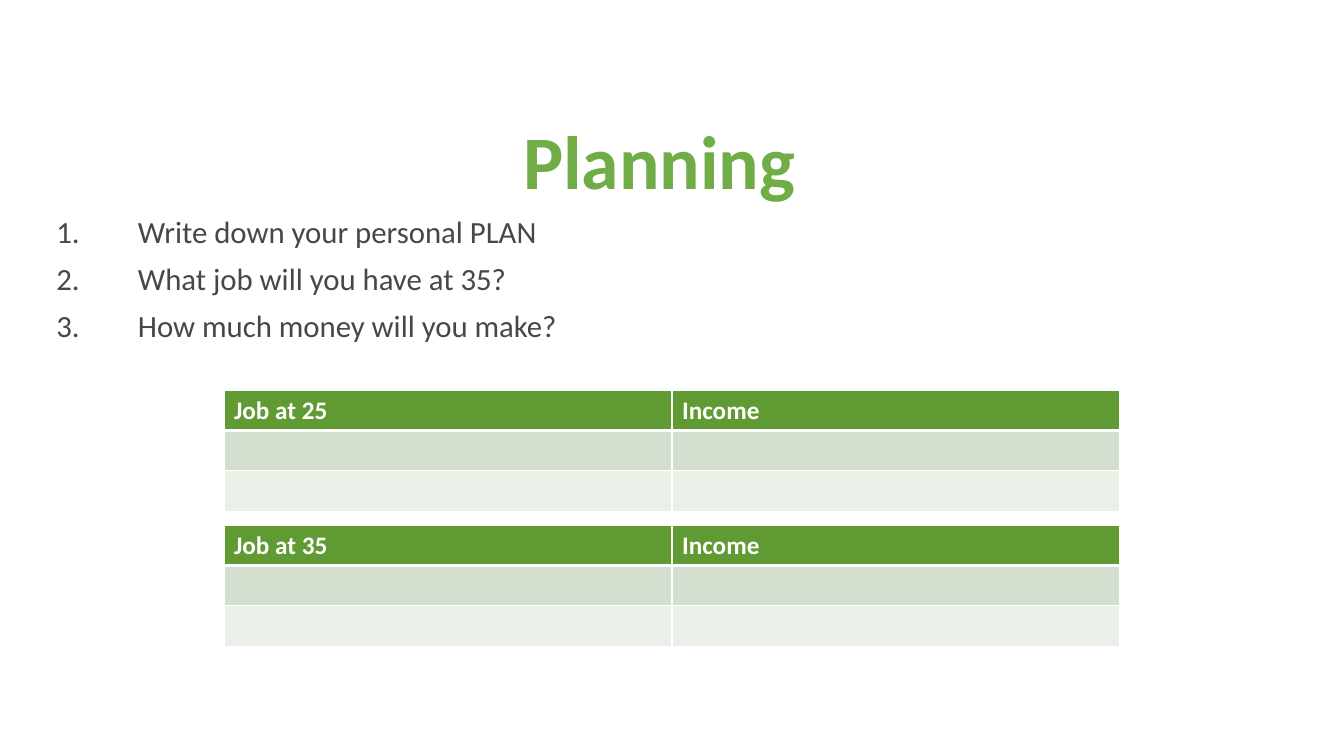
from lxml import etree
from pptx import Presentation
from pptx.dml.color import RGBColor
from pptx.enum.text import MSO_ANCHOR, PP_ALIGN
from pptx.oxml.ns import qn
from pptx.util import Inches, Pt

# Content
TITLE = "Planning"
STEPS = [
    "Write down your personal PLAN\u00a0",
    "What job will you have at 35?",
    "How much money will you make?",
]
TABLE_HEADERS = [("Job at 25", "Income"), ("Job at 35", "Income")]

# Style
FONT = "Calibri"
COLORS = {"title": "70AD47", "body": "464846", "white": "FFFFFF"}
ROW_FILLS = ["609A33", "D2DECE", "EAEFE8"]
CENTER, BOTTOM = PP_ALIGN.CENTER, MSO_ANCHOR.BOTTOM

# Layout in inches
WIDTH, HEIGHT = 13.33, 7.5
TITLE_BOX = (0.74, 1.13, 11.6, 0.96)
STEPS_BOX = (0.46, 2.1, 11.89, 4.75)
STEP_INDENT = 0.81
TABLE_WIDTH = WIDTH * 2 / 3
TABLE_LEFT = (WIDTH - TABLE_WIDTH) / 2
TABLE_TOP, TABLE_PITCH, ROW_HEIGHT = 3.87, 1.34, 0.4


def add_run(paragraph, text, size, color, bold=False):
    run = paragraph.add_run()
    run.text = text
    run.font.name, run.font.size, run.font.bold = FONT, Pt(size), bold
    run.font.color.rgb = RGBColor.from_string(color)


def add_text_frame(slide, box):
    frame = slide.shapes.add_textbox(*map(Inches, box)).text_frame
    frame.word_wrap = True
    return frame


def number_paragraph(paragraph):
    properties = paragraph._p.get_or_add_pPr()
    properties.set("marL", str(Inches(STEP_INDENT)))
    properties.set("indent", str(-Inches(STEP_INDENT)))
    etree.SubElement(properties, qn("a:buAutoNum"), type="arabicPeriod")


def add_borders(cell, bottom_width):
    properties = cell._tc.get_or_add_tcPr()
    widths = {"lnL": 1, "lnR": 1, "lnT": 1, "lnB": bottom_width}
    for position, (side, width) in enumerate(widths.items()):
        line = etree.Element(qn(f"a:{side}"), w=str(Pt(width)))
        fill = etree.SubElement(line, qn("a:solidFill"))
        etree.SubElement(fill, qn("a:srgbClr"), val=COLORS["white"])
        properties.insert(position, line)


def add_job_table(slide, headers, top):
    rows, columns = len(ROW_FILLS), len(headers)
    table = slide.shapes.add_table(
        rows, columns, Inches(TABLE_LEFT), Inches(top),
        Inches(TABLE_WIDTH), Inches(ROW_HEIGHT * rows)).table
    for row, fill in enumerate(ROW_FILLS):
        for column, header in enumerate(headers):
            cell = table.cell(row, column)
            cell.fill.solid()
            cell.fill.fore_color.rgb = RGBColor.from_string(fill)
            # A thick rule separates the header from the body
            add_borders(cell, 3 if row == 0 else 1)
            if row == 0:
                add_run(cell.text_frame.paragraphs[0], header, 18, COLORS["white"], True)


def main():
    presentation = Presentation()
    presentation.slide_width, presentation.slide_height = Inches(WIDTH), Inches(HEIGHT)
    slide = presentation.slides.add_slide(presentation.slide_layouts[6])

    # Title
    frame = add_text_frame(slide, TITLE_BOX)
    frame.vertical_anchor = BOTTOM
    paragraph = frame.paragraphs[0]
    paragraph.alignment, paragraph.line_spacing = CENTER, 0.9
    add_run(paragraph, TITLE, 54, COLORS["title"], True)

    # Numbered steps
    frame = add_text_frame(slide, STEPS_BOX)
    for index, step in enumerate(STEPS):
        paragraph = frame.add_paragraph() if index else frame.paragraphs[0]
        number_paragraph(paragraph)
        paragraph.line_spacing = 0.9
        paragraph.space_before = Pt(10 if index else 0)
        add_run(paragraph, step, 22, COLORS["body"])

    # Job tables
    for index, headers in enumerate(TABLE_HEADERS):
        add_job_table(slide, headers, TABLE_TOP + index * TABLE_PITCH)

    presentation.save("out.pptx")


if __name__ == "__main__":
    main()
